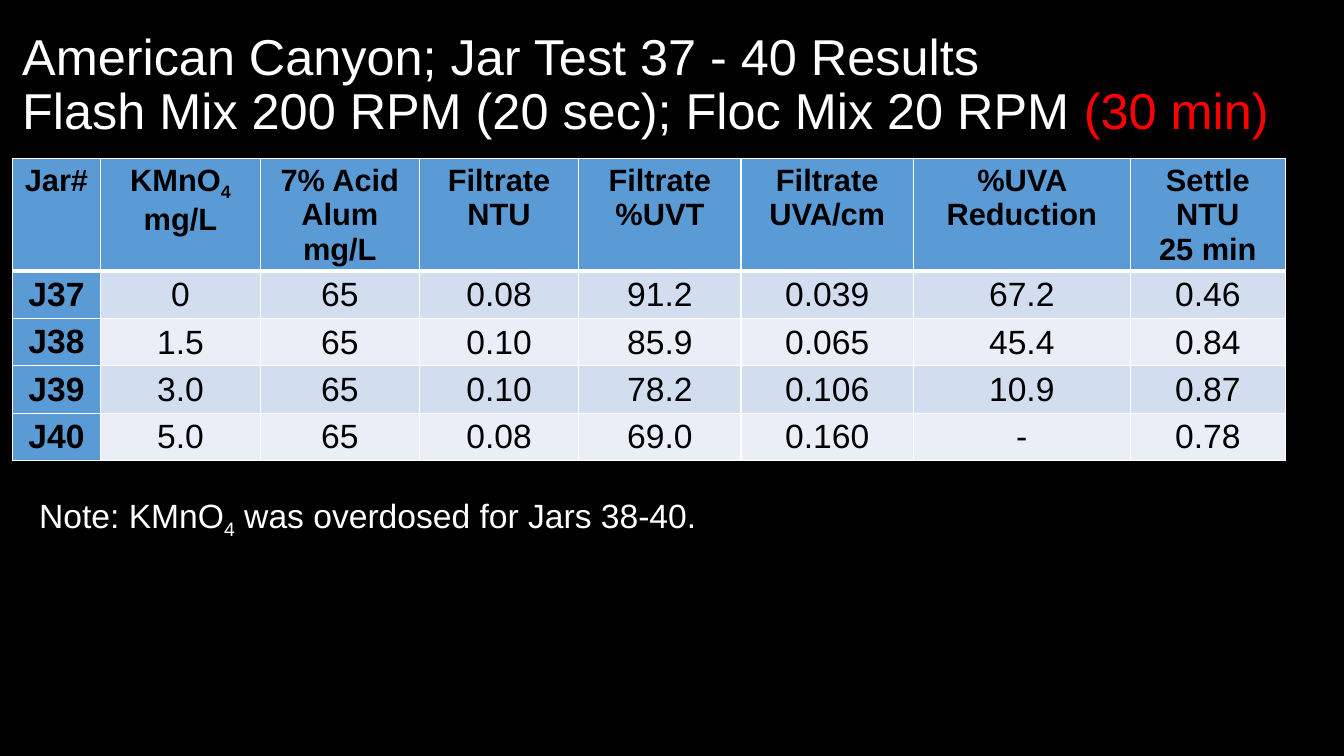
"""Build the jar test results slide."""
from dataclasses import dataclass

from lxml import etree
from pptx import Presentation
from pptx.dml.color import RGBColor
from pptx.enum.text import MSO_ANCHOR, MSO_AUTO_SIZE, PP_ALIGN
from pptx.oxml.ns import qn
from pptx.util import Inches, Pt

LEFT, CENTER = PP_ALIGN.LEFT, PP_ALIGN.CENTER
TOP, MIDDLE = MSO_ANCHOR.TOP, MSO_ANCHOR.MIDDLE
FIXED, GROW = MSO_AUTO_SIZE.NONE, MSO_AUTO_SIZE.SHAPE_TO_FIT_TEXT

TITLE = ("American Canyon; Jar Test 37 - 40 Results\v"
         "Flash Mix 200 RPM (20 sec); Floc Mix 20 RPM ")
ACCENT = "(30 min)"
NOTE = "Note: KMnO~4~ was overdosed for Jars 38-40."
HEADS = ["Jar#", "KMnO~4~\nmg/L", "7% Acid Alum\nmg/L", "Filtrate\nNTU",
         "Filtrate\n%UVT", "Filtrate\nUVA/cm", "%UVA Reduction",
         "Settle\nNTU\n25 min"]
JARS = [
    ["J37", "0", "65", "0.08", "91.2", "0.039", "67.2", "0.46"],
    ["J38", "1.5", "65", "0.10", "85.9", "0.065", "45.4", "0.84"],
    ["J39", "3.0", "65", "0.10", "78.2", "0.106", "10.9", "0.87"],
    ["J40", "5.0", "65", "0.08", "69.0", "0.160", "-", "0.78"],
]
WIDTHS = [0.88, 1.58, 1.58, 1.58, 1.61, 1.71, 2.15, 1.54]
HEIGHTS = [1.12] + [0.47] * len(JARS)


@dataclass(frozen=True)
class Theme:
    """Colours, font and type sizes."""
    font: str = "Arial"
    back: str = "000000"
    light: str = "FFFFFF"
    dark: str = "000000"
    alert: str = "FF0000"
    head: str = "5B9BD5"
    bands: tuple = ("D2DEEF", "EAEFF7")
    title: int = 36
    label: int = 22
    body: int = 24


THEME = Theme()


def style(par, size, color, align=LEFT, bold=False):
    """Format a whole paragraph."""
    par.alignment = align
    par.font.name = THEME.font
    par.font.size = Pt(size)
    par.font.bold = bold
    par.font.color.rgb = RGBColor.from_string(color)


def write(frame, text, *look):
    """Write lines, lowering any part between tildes."""
    for row, line in enumerate(text.split("\n")):
        par = frame.add_paragraph() if row else frame.paragraphs[0]
        style(par, *look)
        for part, words in enumerate(line.split("~")):
            if words:
                run = par.add_run()
                run.text = words
                if part % 2:
                    run._r.get_or_add_rPr().set("baseline", "-25000")


def edge(cell, base):
    """Draw white borders round a cell."""
    props = cell._tc.get_or_add_tcPr()
    sides = {"lnL": 1, "lnR": 1, "lnT": 1, "lnB": base}
    for spot, (side, width) in enumerate(sides.items()):
        line = etree.Element(qn(f"a:{side}"), w=str(Pt(width)))
        fill = etree.SubElement(line, qn("a:solidFill"))
        etree.SubElement(fill, qn("a:srgbClr"), val=THEME.light)
        props.insert(spot, line)


def add_title(slide):
    """Fill the title placeholder."""
    title = slide.shapes.title
    title.left, title.top = Inches(0.12), Inches(0.13)
    title.width, title.height = Inches(13.03), Inches(1.45)
    frame = title.text_frame
    frame.word_wrap = True
    frame.auto_size = FIXED
    frame.vertical_anchor = MIDDLE
    par = frame.paragraphs[0]
    par.text = TITLE
    par.line_spacing = 0.9
    style(par, THEME.title, THEME.light)
    run = par.add_run()
    run.text = ACCENT
    run.font.color.rgb = RGBColor.from_string(THEME.alert)


def add_grid(slide):
    """Add the table of jar results."""
    rows = [HEADS] + JARS
    grid = slide.shapes.add_table(
        len(rows), len(HEADS), Inches(0.12), Inches(1.57),
        Inches(sum(WIDTHS)), Inches(sum(HEIGHTS))).table
    grid.first_row = grid.horz_banding = False
    for col, width in zip(grid.columns, WIDTHS):
        col.width = Inches(width)
    for row, height in zip(grid.rows, HEIGHTS):
        row.height = Inches(height)
    for i, row in enumerate(rows):
        for j, text in enumerate(row):
            cell = grid.cell(i, j)
            label = i == 0 or j == 0
            tint = THEME.head if label else THEME.bands[(i - 1) % 2]
            cell.fill.solid()
            cell.fill.fore_color.rgb = RGBColor.from_string(tint)
            cell.vertical_anchor = TOP if label else MIDDLE
            cell.margin_bottom = Inches(0.01 if label else 0)
            if not label:
                cell.margin_left = cell.margin_right = Inches(0.01)
                cell.margin_top = Inches(0.01)
            edge(cell, 1 if i else 3)
            size = THEME.body if i else THEME.label
            write(cell.text_frame, text, size, THEME.dark, CENTER, label)


def add_note(slide):
    """Add the note under the table."""
    box = slide.shapes.add_textbox(
        Inches(0.29), Inches(4.86), Inches(7.28), Inches(0.5))
    box.text_frame.word_wrap = True
    box.text_frame.auto_size = GROW
    write(box.text_frame, NOTE, THEME.body, THEME.light)


def main():
    """Build and save the slide."""
    deck = Presentation()
    deck.slide_width, deck.slide_height = Inches(13.33), Inches(7.5)
    slide = deck.slides.add_slide(deck.slide_layouts.get_by_name("Title Only"))
    slide.background.fill.solid()
    slide.background.fill.fore_color.rgb = RGBColor.from_string(THEME.back)
    add_title(slide)
    add_grid(slide)
    add_note(slide)
    deck.save("out.pptx")


if __name__ == "__main__":
    main()
